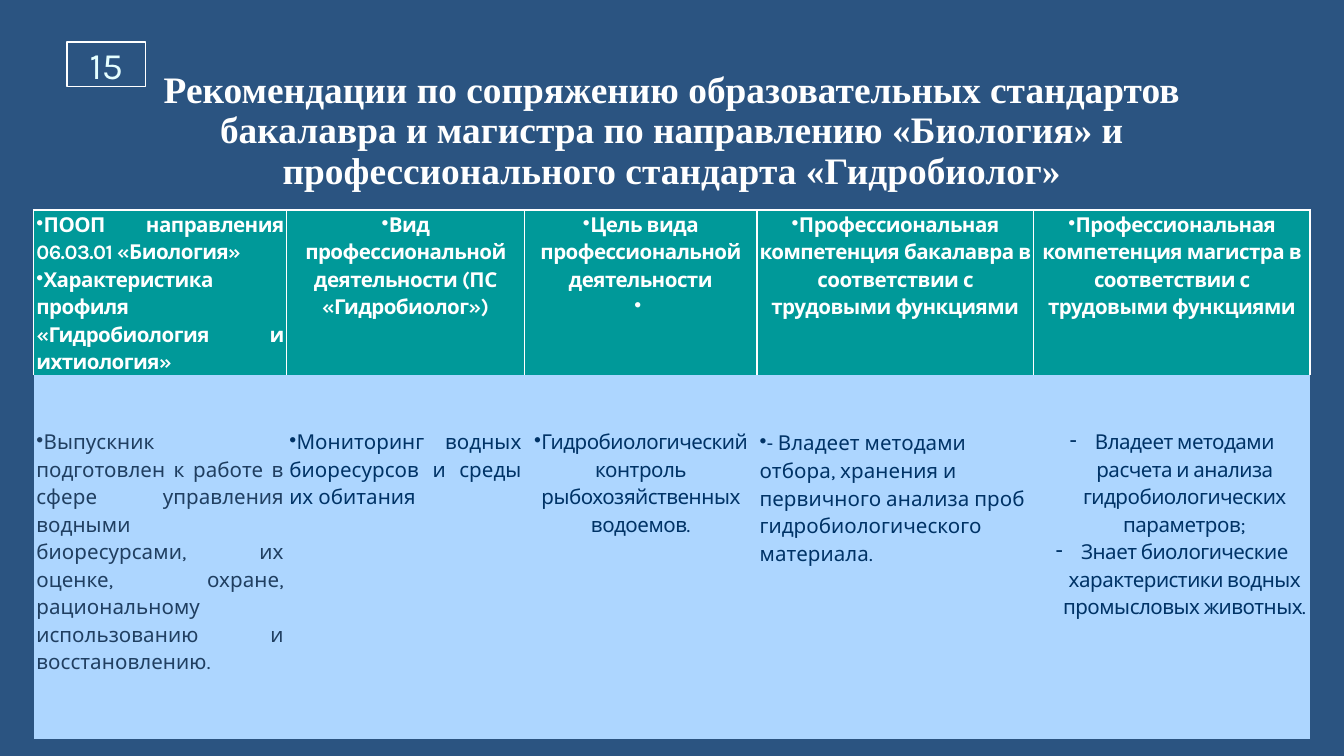
from dataclasses import dataclass

from lxml import etree
from pptx import Presentation
from pptx.dml.color import RGBColor
from pptx.enum.shapes import MSO_SHAPE
from pptx.enum.text import MSO_ANCHOR, MSO_AUTO_SIZE, PP_ALIGN
from pptx.oxml.ns import qn
from pptx.util import Pt

LEFT, CENTER, JUSTIFY = PP_ALIGN.LEFT, PP_ALIGN.CENTER, PP_ALIGN.JUSTIFY
TOP, MIDDLE = MSO_ANCHOR.TOP, MSO_ANCHOR.MIDDLE
RECTANGLE = MSO_SHAPE.RECTANGLE
NO_AUTOFIT = MSO_AUTO_SIZE.NONE
PLAIN_TABLE_STYLE = "{2D5ABB26-0587-4C30-8999-92F81FD0307C}"


@dataclass(frozen=True)
class Theme:
    background: RGBColor = RGBColor.from_string("2B5481")
    white: RGBColor = RGBColor.from_string("FFFFFF")
    number: RGBColor = RGBColor.from_string("E5FFFF")
    header: RGBColor = RGBColor.from_string("009999")
    body: RGBColor = RGBColor.from_string("ADD6FF")
    slate: RGBColor = RGBColor.from_string("203F61")
    navy: RGBColor = RGBColor.from_string("003366")
    title_font: str = "Times New Roman"
    text_font: str = "Karla"
    dash_font: str = "Calibri"
    title_size: Pt = Pt(20)
    table_size: Pt = Pt(11)


theme = Theme()


def add_span(para, text, font, size, color, bold=False, spacing=0):
    """Add a run; spacing is the letter spacing in hundredths of a point."""
    span = para.add_run()
    span.text = text
    span.font.name = font
    span.font.size = size
    span.font.color.rgb = color
    span.font.bold = bold
    if spacing:
        span._r.get_or_add_rPr().set("spc", str(spacing))


def add_white_border(cell):
    """Draw the left, right and top sides of a cell."""
    properties = cell._tc.get_or_add_tcPr()
    for index, side in enumerate(("a:lnL", "a:lnR", "a:lnT")):
        line = etree.Element(qn(side), w=str(Pt(1)))
        fill = etree.SubElement(line, qn("a:solidFill"))
        etree.SubElement(fill, qn("a:srgbClr"), val=str(theme.white))
        properties.insert(index, line)


deck = Presentation()
deck.slide_width, deck.slide_height = Pt(720), Pt(405)
page = deck.slides.add_slide(deck.slide_layouts[5])
page.background.fill.solid()
page.background.fill.fore_color.rgb = theme.background

# Slide number
box = page.shapes.add_shape(RECTANGLE, Pt(36), Pt(22.5), Pt(42), Pt(23.75))
box.shadow.inherit = False
box.fill.background()
box.line.color.rgb = theme.white
box.line.width = Pt(0.75)
box.text_frame.vertical_anchor = MIDDLE
para = box.text_frame.paragraphs[0]
para.alignment = CENTER
add_span(para, "15", theme.text_font, theme.title_size, theme.number)

# Title
title = page.shapes.title
title.left, title.top, title.width, title.height = Pt(36), Pt(34.5), Pt(648), Pt(306)
title.text_frame.auto_size = NO_AUTOFIT
title.text_frame.vertical_anchor = TOP
para = title.text_frame.paragraphs[0]
para.alignment = CENTER
para.line_spacing = 0.9
para.space_before = Pt(0)
add_span(
    para,
    "Рекомендации по сопряжению образовательных стандартов бакалавра и магистра "
    "по направлению «Биология» и профессионального стандарта «Гидробиолог»",
    theme.title_font, theme.title_size, theme.white, bold=True,
)

# Table: each cell is (alignment, bullet, color, letter spacing, paragraphs)
header_cells = [
    (JUSTIFY, "•", theme.white, -30, [
        "ПООП направления 06.03.01 «Биология»",
        "Характеристика профиля «Гидробиология и ихтиология»"]),
    (CENTER, "•", theme.white, -30, [
        "Вид профессиональной деятельности (ПС «Гидробиолог»)"]),
    (CENTER, "•", theme.white, -30, [
        "Цель вида профессиональной деятельности", " "]),
    (CENTER, "•", theme.white, -30, [
        "Профессиональная компетенция бакалавра в соответствии с трудовыми функциями"]),
    (CENTER, "•", theme.white, -30, [
        "Профессиональная компетенция магистра в соответствии с трудовыми функциями"]),
]
body_cells = [
    (JUSTIFY, "•", theme.slate, 0, [
        "Выпускник подготовлен к работе в сфере управления водными биоресурсами, "
        "их оценке, охране, рациональному использованию и восстановлению."]),
    (JUSTIFY, "•", theme.navy, 0, [
        "Мониторинг водных биоресурсов и среды их обитания"]),
    (CENTER, "•", theme.navy, -30, [
        "Гидробиологический контроль рыбохозяйственных водоемов."]),
    (LEFT, "•", theme.navy, 0, [
        "- Владеет методами отбора, хранения и первичного анализа проб "
        "гидробиологического материала."]),
    (CENTER, "-", theme.navy, -30, [
        "Владеет методами расчета и анализа гидробиологических параметров;",
        "Знает биологические характеристики водных промысловых животных."]),
]
rows = [
    (87, theme.header, 0, True, header_cells),
    (195, theme.body, 28, False, body_cells),
]
column_widths = [135.5, 127.5, 124.5, 148.25, 148.25]

frame = page.shapes.add_table(
    len(rows), len(column_widths), Pt(18), Pt(112.5), Pt(684), Pt(282))
table = frame.table
table.first_row = table.horz_banding = False
table._tbl.tblPr.find(qn("a:tableStyleId")).text = PLAIN_TABLE_STYLE
for column, width in zip(table.columns, column_widths):
    column.width = Pt(width)

for row_index, (height, fill, top_margin, is_header, cells) in enumerate(rows):
    table.rows[row_index].height = Pt(height)
    for column_index, (alignment, bullet, color, spacing, texts) in enumerate(cells):
        cell = table.cell(row_index, column_index)
        cell.fill.solid()
        cell.fill.fore_color.rgb = fill
        cell.margin_left = cell.margin_right = Pt(1.5)
        cell.margin_top, cell.margin_bottom = Pt(top_margin), Pt(0)
        if is_header:
            add_white_border(cell)
        for text_index, text in enumerate(texts):
            text_frame = cell.text_frame
            para = text_frame.add_paragraph() if text_index else text_frame.paragraphs[0]
            para.alignment = alignment
            para.line_spacing = 1.15
            properties = para._p.get_or_add_pPr()
            indent = Pt(13.5) if bullet == "-" else 0
            properties.set("marL", str(indent))
            properties.set("indent", str(-indent))
            etree.SubElement(properties, qn("a:buChar"), char=bullet)
            if text.startswith("- "):
                add_span(para, "- ", theme.dash_font, theme.table_size, color)
                text = text[2:]
            add_span(para, text, theme.text_font, theme.table_size, color,
                     is_header, spacing)

deck.save("out.pptx")
